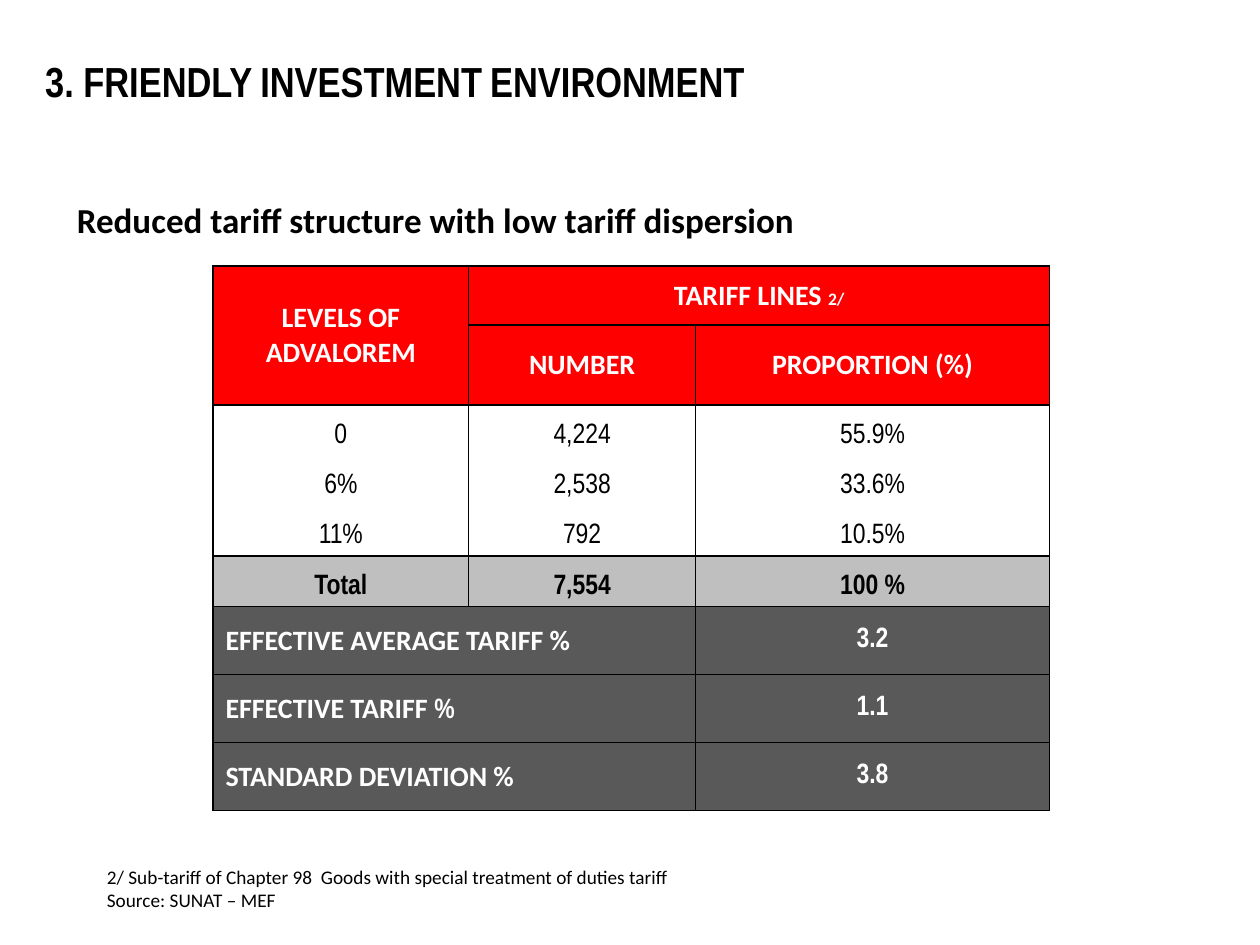
from lxml import etree
from pptx import Presentation
from pptx.dml.color import RGBColor
from pptx.enum.text import MSO_ANCHOR, PP_ALIGN
from pptx.oxml.ns import qn
from pptx.util import Inches, Pt

LEFT, CENTER = PP_ALIGN.LEFT, PP_ALIGN.CENTER
TOP, MIDDLE, BOTTOM = MSO_ANCHOR.TOP, MSO_ANCHOR.MIDDLE, MSO_ANCHOR.BOTTOM
COLORS = {"black": "000000", "white": "FFFFFF", "red": "FF0000",
          "silver": "BFBFBF", "gray": "595959"}
SANS, NARROW = "Calibri", "Arial Narrow"

COLUMNS = [2.03, 1.8, 2.81]
ROWS = [0.47, 0.48] + [0.4] * 4 + [0.54] * 3
LEVELS = [("0", "4,224", "55.9%"),
          ("6%", "2,538", "33.6%"),
          ("11%", "792", "10.5%")]
TOTAL = ("Total", "7,554", "100 %")
INDICATORS = [([("EFFECTIVE AVERAGE TARIFF %", {})], "3.2"),
              ([("EFFECTIVE TARIFF ", {}), ("%", {"name": NARROW})], "1.1"),
              ([("STANDARD DEVIATION %", {})], "3.8")]

HEADER = {"fill": "red", "color": "white", "name": SANS, "bold": True}
LEVEL = {"fill": None, "color": "black", "name": NARROW, "bold": False,
         "anchor": BOTTOM}
SUM = LEVEL | {"fill": "silver", "bold": True}
VALUE = HEADER | {"fill": "gray", "name": NARROW}
LABEL = VALUE | {"name": SANS, "align": LEFT}


def rgb(name):
    return RGBColor.from_string(COLORS[name])


def add_runs(p, runs, color="black", **base):
    """Add (text, font changes) pairs on top of the base font."""
    for text, changes in runs:
        r = p.add_run()
        r.text = text
        r.font.color.rgb = rgb(color)
        for key, value in (base | changes).items():
            setattr(r.font, key, value)


def set_borders(cell, sides):
    """Draw the given sides, out of L, R, T and B, and clear the others."""
    tc_pr = cell._tc.get_or_add_tcPr()
    for side in "LRTB":
        ln = etree.SubElement(tc_pr, qn(f"a:ln{side}"), w=str(Pt(1)))
        if side in sides:
            fill = etree.SubElement(ln, qn("a:solidFill"))
            etree.SubElement(fill, qn("a:srgbClr"), val=COLORS["black"])
        else:
            etree.SubElement(ln, qn("a:noFill"))


def fill_cell(cell, runs, fill, color, name, bold, anchor=MIDDLE, align=CENTER):
    cell.vertical_anchor = anchor
    if fill:
        cell.fill.solid()
        cell.fill.fore_color.rgb = rgb(fill)
    else:
        cell.fill.background()
    p = cell.text_frame.paragraphs[0]
    p.alignment = align
    add_runs(p, runs, color, name=name, bold=bold, size=Pt(16))


def add_textbox(s, box, anchor):
    tf = s.shapes.add_textbox(*map(Inches, box)).text_frame
    tf.word_wrap = True
    tf.vertical_anchor = anchor
    return tf


def add_heading(s, box):
    p = add_textbox(s, box, MIDDLE).paragraphs[0]
    p.line_spacing = 0.9
    big = {"name": NARROW, "size": Pt(24)}
    gap = (" ", {"name": SANS, "size": Pt(20)})
    add_runs(p, [("3. FRIENDLY", big), gap, ("INVESTMENT", big), gap,
                 ("ENVIRONMENT", big)], bold=True)


def add_title(s, box):
    title = s.shapes.title
    title.left, title.top, title.width, title.height = map(Inches, box)
    tf = title.text_frame
    tf.vertical_anchor = MIDDLE
    p = tf.paragraphs[0]
    p.alignment = LEFT
    add_runs(p, [("Reduced tariff structure with low tariff dispersion", {})],
             name=SANS, size=Pt(20), bold=True)


def add_tariff_table(s, left, top):
    box = (left, top, sum(COLUMNS), sum(ROWS))
    table = s.shapes.add_table(len(ROWS), len(COLUMNS), *map(Inches, box)).table
    table.first_row = table.horz_banding = False
    for col, width in zip(table.columns, COLUMNS):
        col.width = Inches(width)
    for row, height in zip(table.rows, ROWS):
        row.height = Inches(height)

    first, last = 2, 1 + len(LEVELS)
    for i, row in enumerate(table.rows):
        above = "" if first < i <= last else "T"
        below = "" if first <= i < last else "B"
        for cell in row.cells:
            set_borders(cell, "LR" + above + below)

    table.cell(0, 0).merge(table.cell(1, 0))
    table.cell(0, 1).merge(table.cell(0, 2))
    fill_cell(table.cell(0, 0), [("LEVELS OF ADVALOREM", {})], **HEADER)
    fill_cell(table.cell(0, 1),
              [("TARIFF LINES ", {}), ("2/", {"size": Pt(10)})], **HEADER)
    for j, text in enumerate(("NUMBER", "PROPORTION (%)"), 1):
        fill_cell(table.cell(1, j), [(text, {})], **HEADER)

    for i, texts in enumerate(LEVELS + [TOTAL], first):
        for j, text in enumerate(texts):
            style = SUM if texts is TOTAL else LEVEL
            fill_cell(table.cell(i, j), [(text, {})], **style)

    for i, (label, value) in enumerate(INDICATORS, last + 2):
        table.cell(i, 0).merge(table.cell(i, 1))
        fill_cell(table.cell(i, 0), label, **LABEL)
        fill_cell(table.cell(i, 2), [(value, {})], **VALUE)


def add_footnotes(s, box):
    tf = add_textbox(s, box, TOP)
    notes = ("2/ Sub-tariff of Chapter 98  Goods with special treatment of duties tariff",
             "Source: SUNAT – MEF")
    for i, note in enumerate(notes):
        p = tf.add_paragraph() if i else tf.paragraphs[0]
        add_runs(p, [(note, {})], name=SANS, size=Pt(11))


def main():
    prs = Presentation()
    prs.slide_width, prs.slide_height = Inches(10), Inches(7.5)
    s = prs.slides.add_slide(prs.slide_layouts.get_by_name("Title Only"))
    add_title(s, (0.51, 1.55, 8.12, 0.39))
    add_footnotes(s, (0.75, 6.82, 8.4, 0.47))
    add_heading(s, (0.26, 0.28, 5.84, 0.77))
    add_tariff_table(s, 1.69, 2.11)
    prs.save("out.pptx")


if __name__ == "__main__":
    main()
